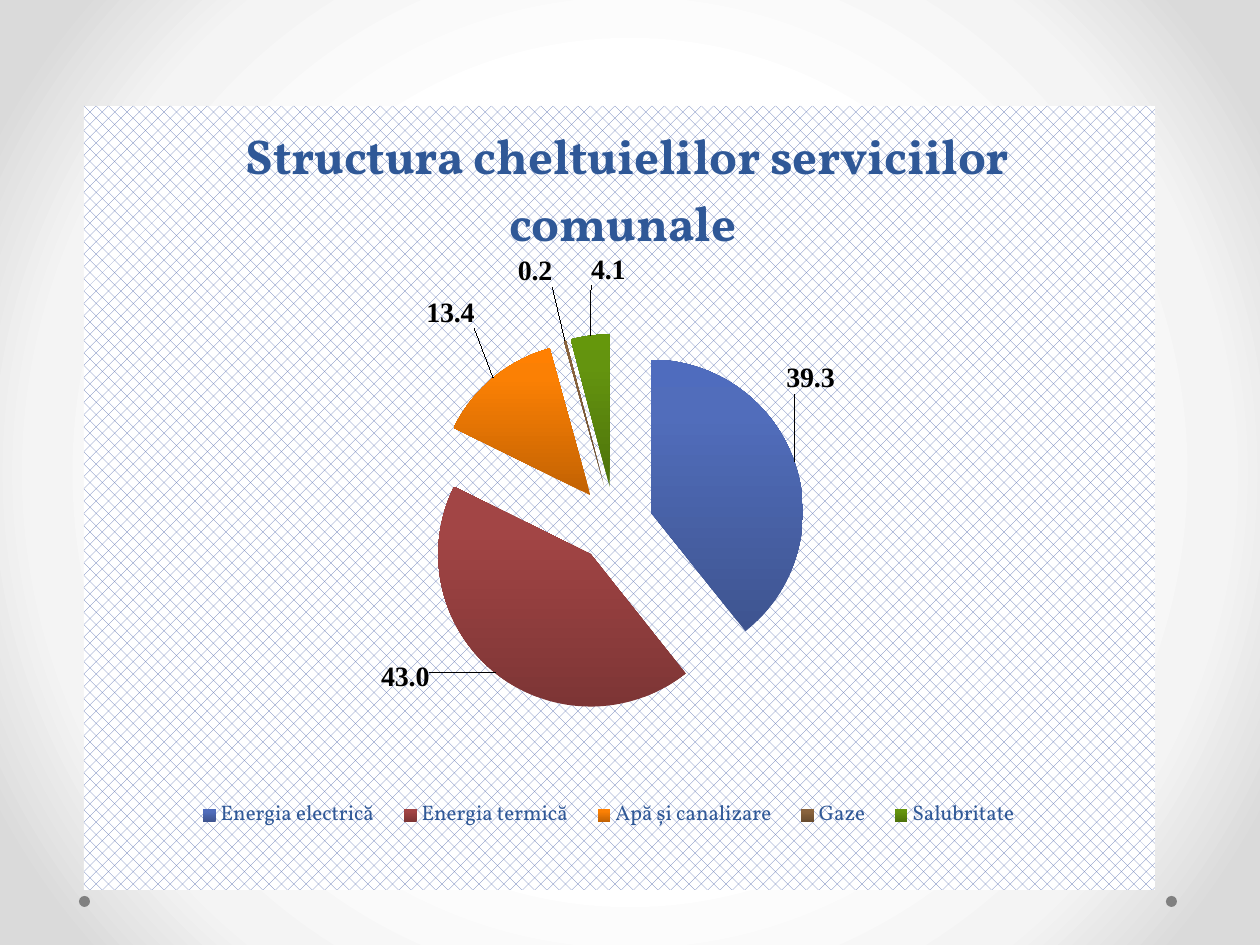
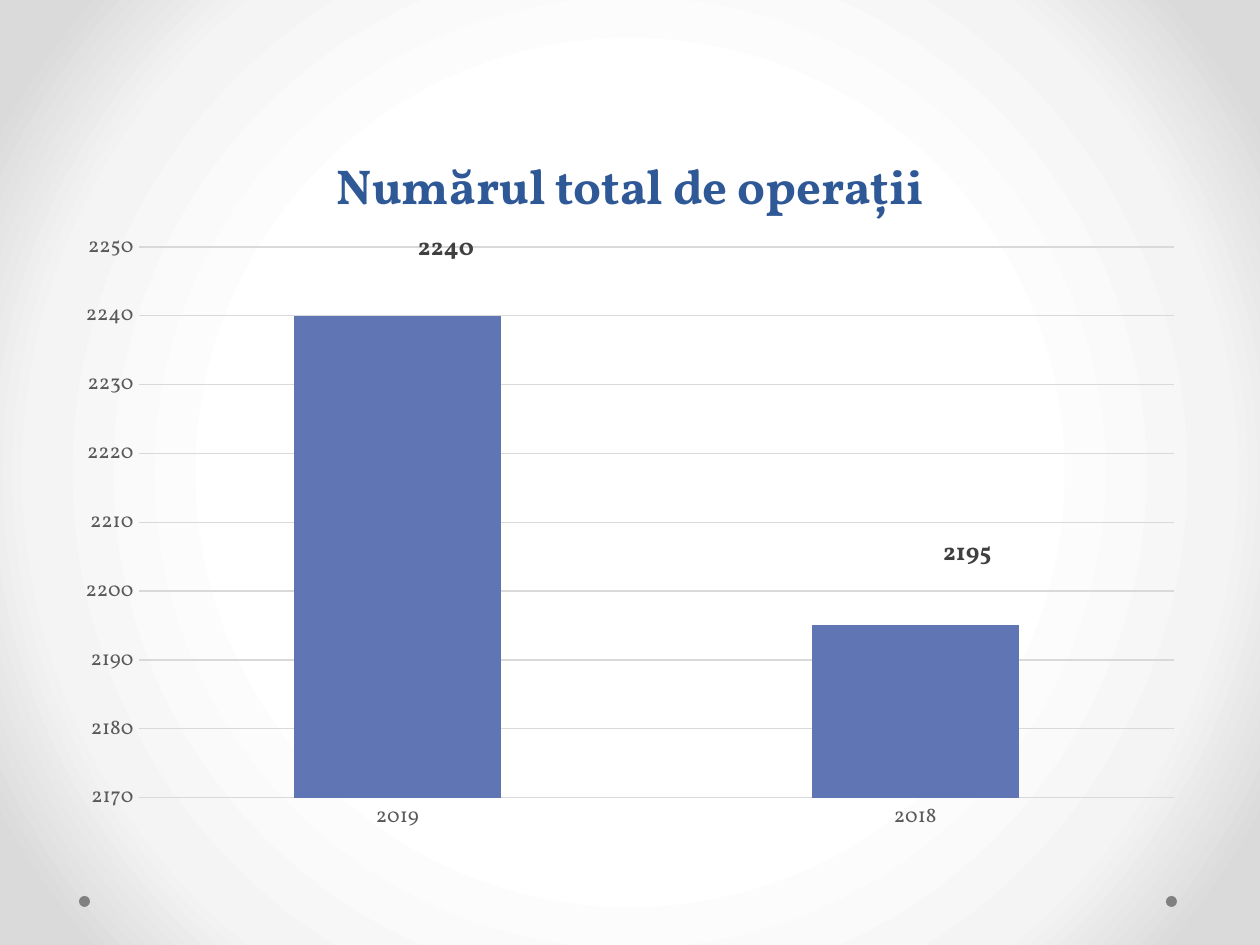
import pptx
import pptx.chart.data
import pptx.dml.color
import pptx.enum.chart
import pptx.enum.shapes
import pptx.enum.text
import pptx.oxml
import pptx.oxml.ns
import pptx.util

PX = 914400 / 126
FONT = "Vollkorn"
NAVY, BLUE, DOT, GREY, DARK, GRID = "2F5897", "6076B4", "808080", "595959", "404040", "D9D9D9"
TITLE_SIZE = 28

BACKGROUND = [(50, "FFFFFF"), (76, "F4F4F4"), (92, "DADADA")]
DOTS = [(79, 896), (1166, 896)]
DOT_SIZE = 11

# Name, value, dark to light shades, label shift in px
EXPENSES = [
    ("Energia electrică", 39.3, ("3E5490", "516DBB", "4F6CBE"), (-15, -65)),
    ("Energia termică", 43, ("7D3535", "A24545", "A44343"), (-61, -17)),
    ("Apă și canalizare", 13.4, ("C26203", "FB8004", "FF8002"), (-14, -43)),
    ("Gaze", 0.2, ("694C2F", "89633D", "8B633C"), (-11, -46)),
    ("Salubritate", 4.1, ("4D720B", "64940F", "65970C"), (36, -42)),
]
EXPENSES_TITLE = " Structura cheltuielilor serviciilor comunale"
EXPENSES_BOX = (84, 106, 1071, 784)

# Year, value, label shift in px
OPERATIONS = [("2019", 2240, (49, -44)), ("2018", 2195, (52, -50))]
OPERATIONS_TITLE = "Numărul total de operații"
OPERATIONS_TITLE_BOX = (63, 106, 1134, 115)
OPERATIONS_BOX = (63, 220, 1134, 624)

CHART = pptx.enum.chart


def px(*lengths):
    return [pptx.util.Emu(round(n * PX)) for n in lengths]


def rgb(color):
    return pptx.dml.color.RGBColor.from_string(color)


def xml(tag, attrs="", inner=""):
    return pptx.oxml.parse_xml(
        f'<{tag} {pptx.oxml.ns.nsdecls("a", "c")} {attrs}>{inner}</{tag}>')


def style(font, size, color=None, bold=False, name=FONT):
    font.size, font.bold, font.name = pptx.util.Pt(size), bold, name
    if color:
        font.color.rgb = rgb(color)


def solid_to_gradient(parent, stops, direction):
    """Replace the solid fill inside parent by a gradient."""
    gs = "".join(f'<a:gs pos="{pos * 1000}"><a:srgbClr val="{color}"/></a:gs>'
                 for pos, color in stops)
    solid = parent.find(pptx.oxml.ns.qn("a:solidFill"))
    parent.replace(solid, xml("a:gradFill", 'rotWithShape="1"',
                              f"<a:gsLst>{gs}</a:gsLst>{direction}"))


def layout(**values):
    parts = "".join(f'<c:{key} val="{value}"/>' for key, value in values.items())
    return xml("c:layout", "", f"<c:manualLayout>{parts}</c:manualLayout>")


def set_background(master):
    master.background.fill.solid()
    solid_to_gradient(
        master.element.xpath(".//p:bgPr")[0], BACKGROUND,
        '<a:path path="circle"><a:fillToRect l="50000" t="50000" r="50000" b="50000"/></a:path>')


def add_slide(prs, layout_index):
    s = prs.slides.add_slide(prs.slide_layouts[layout_index])
    for x, y in DOTS:
        sp = s.shapes.add_shape(pptx.enum.shapes.MSO_SHAPE.OVAL,
                                *px(x, y, DOT_SIZE, DOT_SIZE))
        sp.shadow.inherit = False
        sp.fill.solid()
        sp.fill.fore_color.rgb = rgb(DOT)
        sp.line.fill.background()
    return s


def add_chart(s, kind, box, names, values):
    data = pptx.chart.data.CategoryChartData()
    data.categories = names
    data.add_series("Series 1", values)
    chart = s.shapes.add_chart(kind, *px(*box), data).chart
    style(chart.font, 10)
    chart.has_title = chart.has_legend = False
    return chart


def label_points(chart, box, shifts, number_format, **font):
    """Show values outside the points, each moved by its shift."""
    series = chart.plots[0].series[0]
    for i in range(len(shifts)):
        label = series.points[i].data_label
        style(label.font, **font)
        label.position = CHART.XL_LABEL_POSITION.OUTSIDE_END
    for dLbl, (dx, dy) in zip(chart.element.xpath(".//c:dLbl"), shifts):
        dLbl.insert(1, layout(x=round(dx / box[2], 3), y=round(dy / box[3], 3)))
        dLbl.insert(2, xml("c:numFmt", f'formatCode="{number_format}" sourceLinked="0"'))
    labels = series.data_labels
    labels.show_value = True
    labels.number_format, labels.number_format_is_linked = number_format, False
    style(labels.font, **font)


def add_expenses(prs):
    s = add_slide(prs, 6)
    names, values, shades, shifts = zip(*EXPENSES)
    chart = add_chart(s, CHART.XL_CHART_TYPE.PIE, EXPENSES_BOX, names, values)

    chart.has_title = True
    p = chart.chart_title.text_frame.paragraphs[0]
    p.text = EXPENSES_TITLE
    style(p.font, TITLE_SIZE, NAVY, True)
    chart.chart_title.include_in_layout = False

    chart.has_legend = True
    legend = chart.legend
    legend.position = CHART.XL_LEGEND_POSITION.BOTTOM
    legend.include_in_layout = False
    style(legend.font, 12, NAVY)

    points = chart.plots[0].series[0].points
    for i in range(len(EXPENSES)):
        points[i].format.fill.solid()
        points[i].format.line.fill.background()
    for spPr, colors in zip(chart.element.xpath(".//c:dPt/c:spPr"), shades):
        solid_to_gradient(spPr, zip((0, 80, 100), colors),
                          '<a:lin ang="16200000" scaled="0"/>')
    label_points(chart, EXPENSES_BOX, shifts, "0.0",
                 size=16, bold=True, name="Times New Roman")

    root = chart.element
    root.xpath(".//c:ser/c:dPt")[0].addprevious(xml("c:explosion", 'val="25"'))
    for old in root.xpath("./c:chart/*/c:layout"):
        old.getparent().remove(old)
    root.xpath("./c:chart/c:title/c:tx")[0].addnext(layout(
        xMode="edge", yMode="edge", x=0.134, y=0.01))
    root.xpath(".//c:plotArea")[0].insert(0, layout(
        layoutTarget="inner", xMode="edge", yMode="edge", x=0.076, y=0.291, w=0.839, h=0.486))
    root.xpath(".//c:legendPos")[0].addnext(layout(
        xMode="edge", yMode="edge", x=0.09, y=0.875, w=0.8, h=0.06))
    root.xpath("./c:chart")[0].addnext(xml(
        "c:spPr", "",
        f'<a:pattFill prst="pct30"><a:fgClr><a:srgbClr val="{BLUE}"/></a:fgClr>'
        '<a:bgClr><a:srgbClr val="FFFFFF"/></a:bgClr></a:pattFill><a:ln><a:noFill/></a:ln>'))


def add_operations(prs):
    s = add_slide(prs, 5)
    title = s.shapes.title
    title.left, title.top, title.width, title.height = px(*OPERATIONS_TITLE_BOX)
    tf = title.text_frame
    tf.text = OPERATIONS_TITLE
    tf.vertical_anchor = pptx.enum.text.MSO_ANCHOR.BOTTOM
    p = tf.paragraphs[0]
    p.alignment = pptx.enum.text.PP_ALIGN.CENTER
    p.line_spacing = pptx.util.Pt(58)
    style(p.font, TITLE_SIZE, NAVY, True)

    years, values, shifts = zip(*OPERATIONS)
    chart = add_chart(s, CHART.XL_CHART_TYPE.COLUMN_CLUSTERED, OPERATIONS_BOX, years, values)
    plot = chart.plots[0]
    plot.gap_width = 150
    plot.vary_by_categories = False
    fill = plot.series[0].format.fill
    fill.solid()
    fill.fore_color.rgb = rgb(BLUE)
    label_points(chart, OPERATIONS_BOX, shifts, "0", size=14, color=DARK, bold=True)
    for leader in chart.element.xpath(".//c:showLeaderLines"):
        leader.set("val", "0")

    for axis in (chart.category_axis, chart.value_axis):
        axis.major_tick_mark = axis.minor_tick_mark = CHART.XL_TICK_MARK.NONE
        axis.format.line.fill.background()
        style(axis.tick_labels.font, 12, GREY)
    axis = chart.value_axis
    axis.minimum_scale, axis.maximum_scale, axis.major_unit = 2170, 2250, 10
    grid = axis.major_gridlines.format.line
    grid.color.rgb = rgb(GRID)
    grid.width = pptx.util.Pt(0.75)


def main():
    prs = pptx.Presentation()
    prs.slide_width, prs.slide_height = px(1260, 945)
    set_background(prs.slide_master)
    add_expenses(prs)
    add_operations(prs)
    prs.save("out.pptx")


if __name__ == "__main__":
    main()
